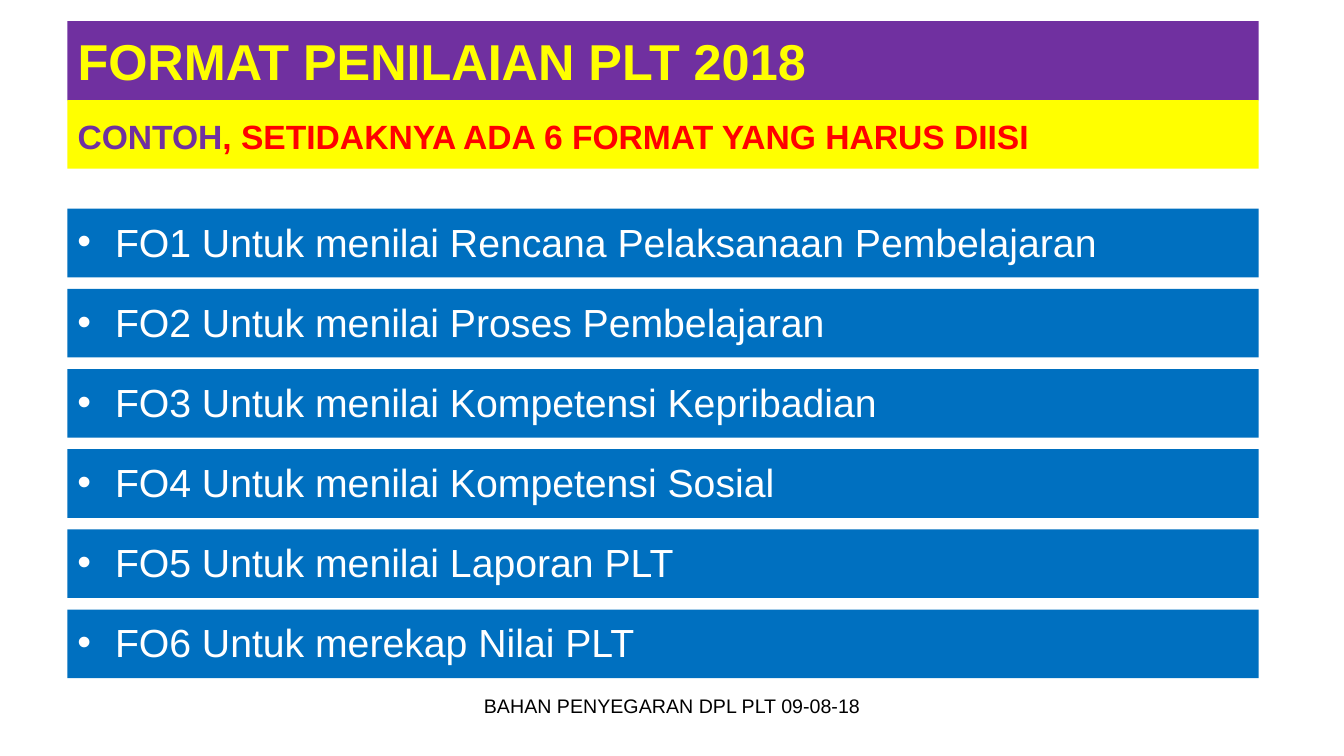
from lxml.etree import SubElement
from pptx import Presentation
from pptx.dml.color import RGBColor
from pptx.enum.shapes import MSO_SHAPE
from pptx.enum.text import MSO_ANCHOR, MSO_AUTO_SIZE, PP_ALIGN
from pptx.oxml.ns import qn
from pptx.util import Cm, Pt

# Content
PURPLE, YELLOW, RED, BLUE = "7030A0", "FFFF00", "FF0000", "0070C0"
WHITE, BLACK = "FFFFFF", "000000"
TITLE = [("FORMAT PENILAIAN PLT 2018", YELLOW)]
SUBTITLE = [("CONTOH", PURPLE), (", SETIDAKNYA ADA 6 FORMAT YANG HARUS DIISI", RED)]
FORMATS = [
    "FO1 Untuk menilai Rencana Pelaksanaan Pembelajaran",
    "FO2 Untuk menilai Proses Pembelajaran",
    "FO3 Untuk menilai Kompetensi Kepribadian",
    "FO4 Untuk menilai Kompetensi Sosial",
    "FO5 Untuk menilai Laporan PLT",
    "FO6 Untuk merekap Nilai PLT",
]
FOOTER = [("BAHAN PENYEGARAN DPL PLT 09-08-18", BLACK)]

# Layout in centimetres
LEFT, WIDTH = 1.7, 30.02
BAR_TOP, BAR_HEIGHT, BAR_STEP = 5.26, 1.73, 2.02
TEXT_DROP = 0.23
HANGING = 0.95


def colour(value):
    return RGBColor.from_string(value)


def place(box, top, height, fill):
    box.left, box.top, box.width, box.height = Cm(LEFT), Cm(top), Cm(WIDTH), Cm(height)
    box.fill.solid()
    box.fill.fore_color.rgb = colour(fill)


def set_bullet(para, char=None):
    properties = para._p.get_or_add_pPr()
    indent = Cm(HANGING) if char else 0
    properties.set("marL", str(indent))
    properties.set("indent", str(-indent))
    if char:
        SubElement(properties, qn("a:buFont")).set("typeface", "Arial")
        SubElement(properties, qn("a:buChar")).set("char", char)
    else:
        SubElement(properties, qn("a:buNone"))


def write(box, spans, size, bold=False, align=PP_ALIGN.LEFT,
          anchor=MSO_ANCHOR.TOP, inset_top=0.13, bullet=None):
    frame = box.text_frame
    frame.word_wrap = True
    frame.auto_size = MSO_AUTO_SIZE.NONE
    frame.vertical_anchor = anchor
    frame.margin_top = Cm(inset_top)
    para = frame.paragraphs[0]
    set_bullet(para, bullet)
    para.alignment = align
    para.space_before = Pt(0)
    for text, ink in spans:
        span = para.add_run()
        span.text = text
        span.font.name = "Arial"
        span.font.size = Pt(size)
        span.font.bold = bold
        span.font.color.rgb = colour(ink)


deck = Presentation()
deck.slide_width, deck.slide_height = Cm(33.87), Cm(19.05)
page = deck.slides.add_slide(deck.slide_layouts[1])

# Title and subtitle bands
title, subtitle = page.shapes.title, page.placeholders[1]
place(title, 0.53, 2, PURPLE)
write(title, TITLE, 36, bold=True, anchor=MSO_ANCHOR.MIDDLE)
place(subtitle, 2.52, BAR_HEIGHT, YELLOW)
write(subtitle, SUBTITLE, 24, bold=True, anchor=MSO_ANCHOR.MIDDLE, inset_top=TEXT_DROP)

# One bar for each format
for index, text in enumerate(FORMATS):
    bar = page.shapes.add_shape(MSO_SHAPE.RECTANGLE, 0, 0, 0, 0)
    place(bar, BAR_TOP + index * BAR_STEP, BAR_HEIGHT, BLUE)
    bar.line.fill.background()
    bar.shadow.inherit = False
    write(bar, [(text, WHITE)], 28, inset_top=TEXT_DROP, bullet="•")

# Footer
footer = page.shapes.add_textbox(Cm(11.58), Cm(17.35), Cm(10.72), Cm(1.32))
write(footer, FOOTER, 14, align=PP_ALIGN.CENTER)

deck.save("out.pptx")
